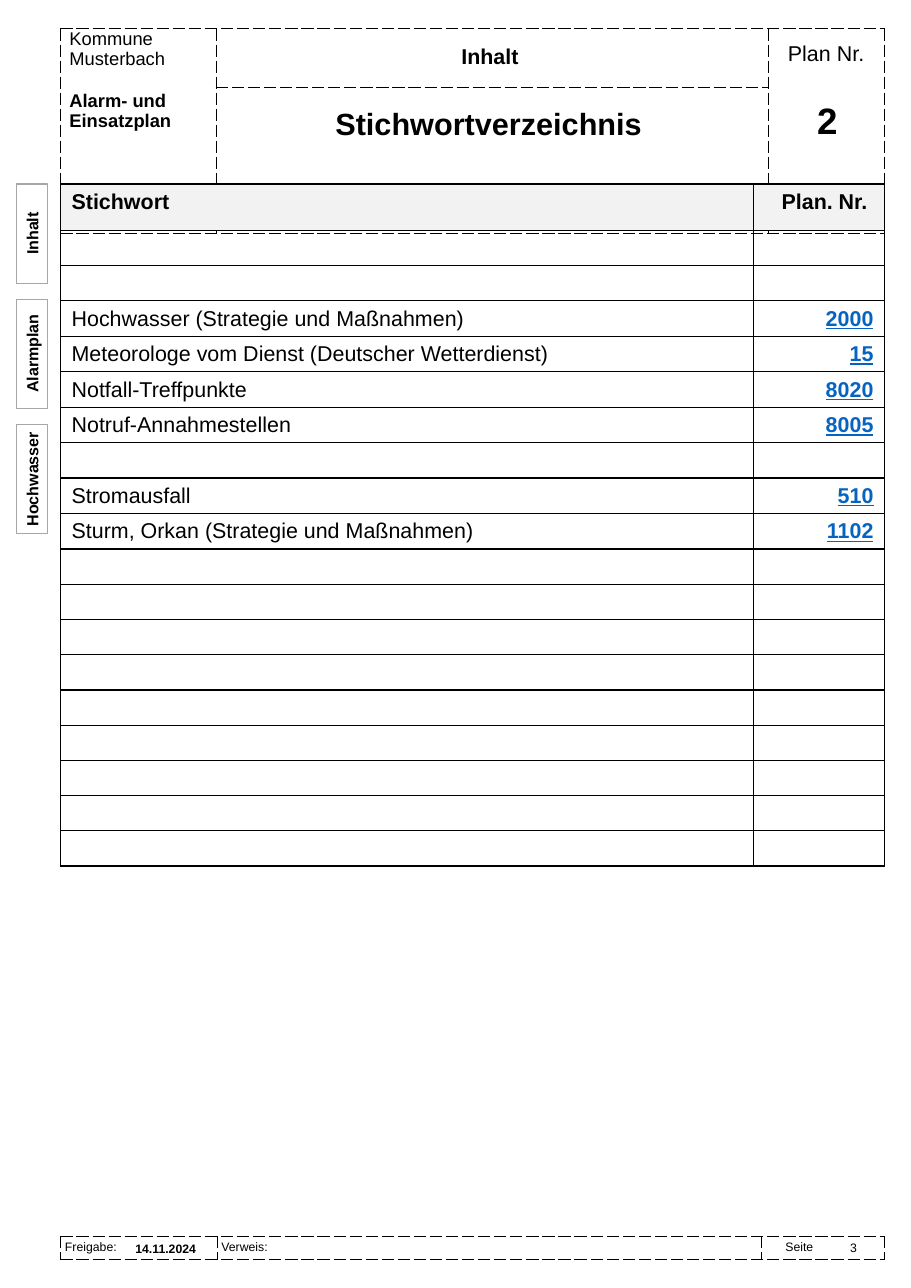
from dataclasses import dataclass

from lxml import etree
from pptx import Presentation
from pptx.dml.color import RGBColor
from pptx.enum.shapes import MSO_SHAPE
from pptx.enum.text import MSO_ANCHOR, PP_ALIGN
from pptx.oxml.ns import qn
from pptx.util import Inches, Pt

LEFT, CENTER, RIGHT = PP_ALIGN.LEFT, PP_ALIGN.CENTER, PP_ALIGN.RIGHT
TOP, MIDDLE = MSO_ANCHOR.TOP, MSO_ANCHOR.MIDDLE
RECTANGLE = MSO_SHAPE.RECTANGLE


@dataclass(frozen=True)
class Theme:
    font: str = "Arial"
    ink: str = "000000"
    link: str = "0563C1"
    paper: str = "FFFFFF"
    head_fill: str = "F2F2F2"
    tab_line: str = "A6A6A6"
    small: float = 8
    tab: float = 10.5
    owner: float = 12
    body: float = 14
    title: float = 20
    number: float = 24


THEME = Theme()
NO_MARGIN = (0, 0, 0, 0)
HEADER_MARGIN = (0.08, 0, 0.08, 0)
BODY_MARGIN = (0.1, 0.05, 0.1, 0.05)
FOOTER_MARGIN = (0.04, 0.04, 0.04, 0.04)
TITLE_MARGIN = (0.04, 0, 0.04, 0)

KEYWORDS = {
    3: ("Hochwasser (Strategie und Maßnahmen)", "2000"),
    4: ("Meteorologe vom Dienst (Deutscher Wetterdienst)", "15"),
    5: ("Notfall-Treffpunkte", "8020"),
    6: ("Notruf-Annahmestellen", "8005"),
    8: ("Stromausfall", "510"),
    9: ("Sturm, Orkan (Strategie und Maßnahmen)", "1102"),
}
KEYWORD_ROWS = 18

# Label, centre from the top, length
TABS = [("Inhalt", 2.12, 0.9), ("Alarmplan", 3.21, 0.99), ("Hochwasser", 4.35, 0.99)]


def write(paragraph, text, size, bold=False, align=LEFT, color=THEME.ink, underline=False):
    paragraph.alignment = align
    run = paragraph.add_run()
    run.text = text
    font = run.font
    font.name, font.size, font.bold = THEME.font, Pt(size), bold
    font.underline = underline
    font.color.rgb = RGBColor.from_string(color)


def set_margins(target, margins):
    (target.margin_left, target.margin_top,
     target.margin_right, target.margin_bottom) = map(Inches, margins)


def add_borders(cell, width, dash):
    properties = cell._tc.get_or_add_tcPr()
    for side in ("a:lnL", "a:lnR", "a:lnT", "a:lnB"):
        line = etree.SubElement(properties, qn(side), w=str(Pt(width)))
        fill = etree.SubElement(line, qn("a:solidFill"))
        etree.SubElement(fill, qn("a:srgbClr"), val=THEME.ink)
        etree.SubElement(line, qn("a:prstDash"), val=dash)


def add_grid(slide, left, top, columns, rows, margins, width, dash):
    frame = slide.shapes.add_table(
        len(rows), len(columns), Inches(left), Inches(top),
        Inches(sum(columns)), Inches(sum(rows)))
    table = frame.table
    table.first_row = table.horz_banding = False
    for column, size in zip(table.columns, columns):
        column.width = Inches(size)
    for row, size in zip(table.rows, rows):
        row.height = Inches(size)
    for cell in table.iter_cells():
        set_margins(cell, margins)
        add_borders(cell, width, dash)
        cell.fill.background()
    return table


def add_label(slide, box, text, size, bold=True, align=CENTER,
              margins=NO_MARGIN, anchor=MIDDLE, spacing=None):
    frame = slide.shapes.add_textbox(*map(Inches, box)).text_frame
    frame.word_wrap = True
    frame.vertical_anchor = anchor
    set_margins(frame, margins)
    paragraph = frame.paragraphs[0]
    paragraph.line_spacing = spacing
    write(paragraph, text, size, bold, align)


def add_side_tab(slide, text, center, length):
    thickness, axis = 0.28, 0.29
    tab = slide.shapes.add_shape(
        RECTANGLE, Inches(axis - length / 2), Inches(center - thickness / 2),
        Inches(length), Inches(thickness))
    tab.rotation = 270
    tab.shadow.inherit = False
    tab.fill.solid()
    tab.fill.fore_color.rgb = RGBColor.from_string(THEME.paper)
    tab.line.color.rgb = RGBColor.from_string(THEME.tab_line)
    tab.line.width = Pt(0.75)
    frame = tab.text_frame
    frame.vertical_anchor = MIDDLE
    set_margins(frame, (0, 0.04, 0, 0.04))
    write(frame.paragraphs[0], text, THEME.tab, True, CENTER)


def add_footer(slide):
    footer = add_grid(slide, 0.55, 11.22, [1.42, 4.94, 1.12], [0.21],
                      FOOTER_MARGIN, 0.25, "sysDash")
    for column, text in enumerate(["Freigabe:", "Verweis:", "Seite"]):
        write(footer.cell(0, column).text_frame.paragraphs[0], text, THEME.small)
    footer.cell(0, 2).margin_left = Inches(0.22)
    add_label(slide, (7.41, 11.26, 0.45, 0.13), "3", THEME.small, False, RIGHT,
              HEADER_MARGIN, TOP)
    add_label(slide, (1.13, 11.23, 0.81, 0.2), "14.11.2024", THEME.small, True, LEFT,
              (0.1, 0, 0.1, 0))


def add_header(slide):
    header = add_grid(slide, 0.55, 0.26, [1.41, 5.01, 1.06], [0.53, 1.33],
                      HEADER_MARGIN, 0.25, "sysDash")
    for column in (0, 2):
        header.cell(0, column).merge(header.cell(1, column))

    owner = header.cell(0, 0).text_frame
    write(owner.paragraphs[0], "Kommune Musterbach", THEME.owner)
    plan_name = owner.add_paragraph()
    plan_name.space_before = Pt(13.5)
    write(plan_name, "Alarm- und", THEME.owner, True)
    write(owner.add_paragraph(), "Einsatzplan", THEME.owner, True)

    plan_label = header.cell(0, 2)
    plan_label.margin_top = Inches(0.12)
    write(plan_label.text_frame.paragraphs[0], "Plan Nr.", THEME.body, align=CENTER)

    add_label(slide, (1.97, 0.79, 5.01, 0.65), "Stichwortverzeichnis ", THEME.title,
              margins=TITLE_MARGIN)
    add_label(slide, (1.97, 0.27, 5.01, 0.5), "Inhalt ", THEME.body,
              margins=TITLE_MARGIN, spacing=0.9)
    add_label(slide, (6.98, 0.79, 1.06, 0.65), "2", THEME.number, spacing=0.9)


def add_keyword_table(slide):
    table = add_grid(slide, 0.55, 1.67, [6.29, 1.19], [0.42] + [0.32] * KEYWORD_ROWS,
                     BODY_MARGIN, 1, "solid")
    for column, (text, align) in enumerate([("Stichwort", LEFT), ("Plan. Nr. ", RIGHT)]):
        heading = table.cell(0, column)
        heading.fill.solid()
        heading.fill.fore_color.rgb = RGBColor.from_string(THEME.head_fill)
        write(heading.text_frame.paragraphs[0], text, THEME.body, True, align)
    for row, (keyword, plan) in KEYWORDS.items():
        write(table.cell(row, 0).text_frame.paragraphs[0], keyword, THEME.body)
        write(table.cell(row, 1).text_frame.paragraphs[0], plan, THEME.body, True,
              RIGHT, THEME.link, True)
    # Free rows give up their margins so that they keep the common height
    for cell in table.iter_cells():
        if cell.text:
            cell.text_frame.paragraphs[0].line_spacing = Pt(16)
        else:
            set_margins(cell, NO_MARGIN)


def main():
    deck = Presentation()
    deck.slide_width, deck.slide_height = Inches(8.27), Inches(11.69)
    slide = deck.slides.add_slide(deck.slide_layouts[6])

    # Page frame
    add_footer(slide)
    add_header(slide)

    # Register tabs on the left edge
    for text, center, length in TABS:
        add_side_tab(slide, text, center, length)

    # Keyword index
    add_keyword_table(slide)
    deck.save("out.pptx")


if __name__ == "__main__":
    main()
